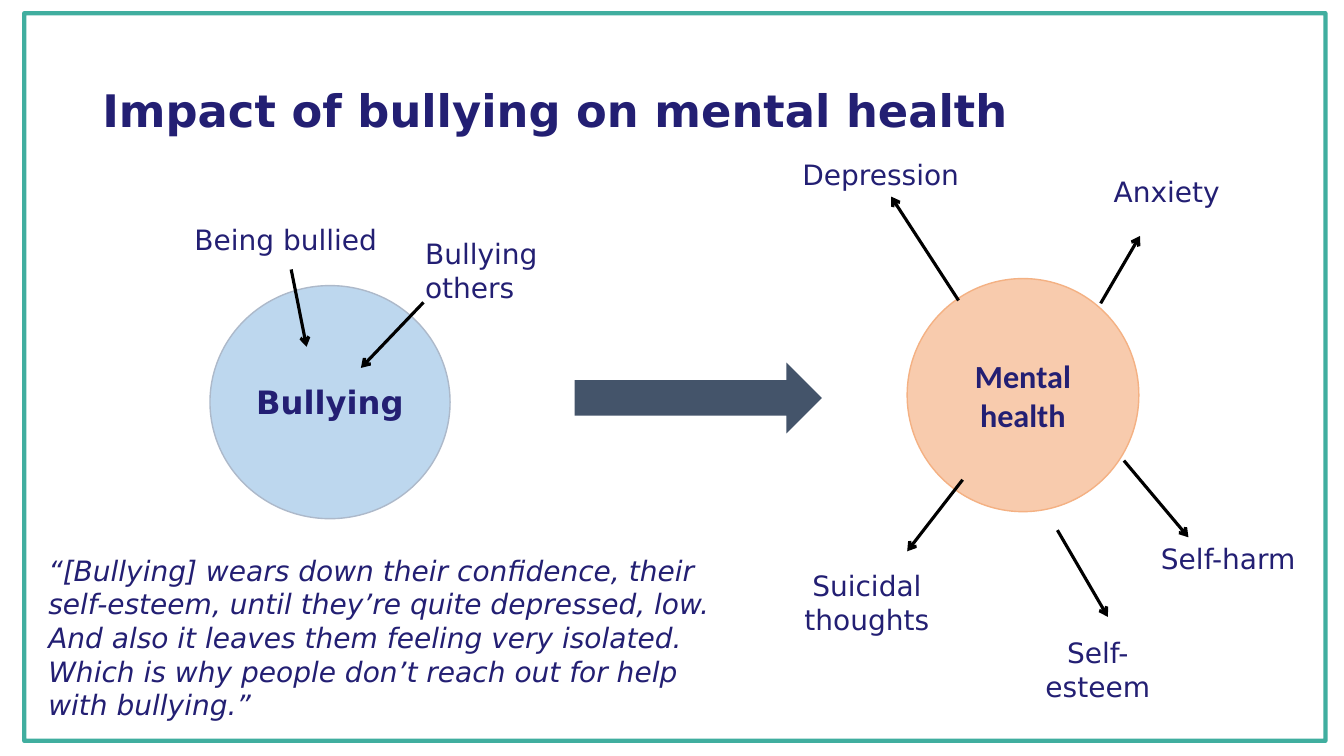
from dataclasses import dataclass
from lxml.etree import SubElement
from pptx import Presentation
from pptx.dml.color import RGBColor
from pptx.enum.shapes import MSO_CONNECTOR, MSO_SHAPE
from pptx.enum.text import MSO_ANCHOR, MSO_AUTO_SIZE, PP_ALIGN
from pptx.oxml.ns import qn
from pptx.util import Pt


@dataclass(frozen=True)
class Theme:
    font: str = "DejaVu Sans"
    alt: str = "Calibri"
    ink: str = "231F73"
    black: str = "000000"
    slate: str = "44546A"
    blue: str = "BDD7EE"
    steel: str = "ADB9CA"
    peach: str = "F8CBAD"
    orange: str = "F4B183"
    green: str = "009380"
    title: int = 32
    hub: int = 23
    body: int = 20


class Deck:
    def __init__(self, theme):
        self.theme = theme
        self.file = Presentation()
        self.file.slide_width, self.file.slide_height = Pt(960), Pt(540)
        self.slide = self.file.slides.add_slide(self.file.slide_layouts[6])

    def put(self, frame, words, size, font=None, align=PP_ALIGN.LEFT,
            bold=False, slant=False):
        frame.word_wrap = True
        para = frame.paragraphs[0]
        para.alignment = align
        run = para.add_run()
        run.text = words
        face = run.font
        face.name = font or self.theme.font
        face.size = Pt(size)
        face.bold, face.italic = bold, slant
        face.color.rgb = RGBColor.from_string(self.theme.ink)
        return para

    def title(self, words, box):
        frame = self.slide.shapes.add_textbox(*map(Pt, box)).text_frame
        frame.vertical_anchor = MSO_ANCHOR.MIDDLE
        para = self.put(frame, words, self.theme.title, bold=True)
        para.line_spacing = 0.9

    def label(self, words, box, align=PP_ALIGN.LEFT, slant=False):
        frame = self.slide.shapes.add_textbox(*map(Pt, box)).text_frame
        self.put(frame, words, self.theme.body, align=align, slant=slant)
        frame.auto_size = MSO_AUTO_SIZE.SHAPE_TO_FIT_TEXT

    def shape(self, kind, box, fill=None, line=None, width=1):
        item = self.slide.shapes.add_shape(kind, *map(Pt, box))
        item.shadow.inherit = False
        if fill:
            item.fill.solid()
            item.fill.fore_color.rgb = RGBColor.from_string(fill)
        else:
            item.fill.background()
        if line:
            item.line.color.rgb = RGBColor.from_string(line)
            item.line.width = Pt(width)
        else:
            item.line.fill.background()
        return item

    def hub(self, words, box, fill, line, font):
        frame = self.shape(MSO_SHAPE.OVAL, box, fill, line).text_frame
        frame.vertical_anchor = MSO_ANCHOR.MIDDLE
        self.put(frame, words, self.theme.hub, font, PP_ALIGN.CENTER, bold=True)

    def arrow(self, start, end):
        link = self.slide.shapes.add_connector(
            MSO_CONNECTOR.STRAIGHT, *map(Pt, start + end))
        link.line.color.rgb = RGBColor.from_string(self.theme.black)
        link.line.width = Pt(2.25)
        props = link._element.spPr
        SubElement(props.find(qn("a:ln")), qn("a:tailEnd"), type="arrow")
        SubElement(props, qn("a:effectLst"))

    def border(self, box):
        item = self.shape(MSO_SHAPE.RECTANGLE, box, line=self.theme.green, width=3)
        tint = item._element.spPr.find(qn("a:ln")).find(".//" + qn("a:srgbClr"))
        SubElement(tint, qn("a:alpha"), val="75000")


def main():
    theme = Theme()
    deck = Deck(theme)
    left, mid = PP_ALIGN.LEFT, PP_ALIGN.CENTER

    # Title
    deck.title("Impact of bullying on mental health", (66, 28.8, 828, 104.4))

    # Cause and effect
    deck.hub("Bullying", (150, 204, 171.5, 166.5), theme.blue, theme.steel, theme.font)
    deck.hub("Mental health", (648, 199, 165.5, 166.5), theme.peach, theme.orange,
             theme.alt)
    deck.shape(MSO_SHAPE.RIGHT_ARROW, (410.5, 259, 176.5, 50.5), theme.slate)

    # Labels around the two circles
    one, two = 31.5, 55.5
    for words, x, y, wide, high, align in (
        ("Being bullied", 131.8, 155.5, 162.7, one, left),
        ("Bullying others", 296.6, 165.4, 162.7, two, left),
        ("Depression", 566, 108.6, 140.4, one, left),
        ("Anxiety", 788.4, 121, 108.7, one, left),
        ("Self-harm", 819.4, 383, 116, one, mid),
        ("Suicidal thoughts", 548, 402.5, 142.5, two, mid),
        ("Self-esteem", 728, 450.7, 112.3, two, mid),
    ):
        deck.label(words, (x, y, wide, high), align)

    # Arrows into bullying, then out of mental health
    for start, end in (
        ((208, 192.5), (219, 247.7)),
        ((302.5, 216), (257.8, 262.8)),
        ((684.7, 214.6), (636.5, 140.4)),
        ((786.2, 216.7), (814.3, 168.5)),
        ((802.8, 329), (848.9, 383.8)),
        ((755.3, 378.7), (791.3, 440.6)),
        ((687.6, 342.7), (648, 393.8)),
    ):
        deck.arrow(start, end)

    # Quotation
    deck.label(
        "“[Bullying] wears down their confidence, their self-esteem, until "
        "they’re quite depressed, low. And also it leaves them feeling very "
        "isolated. Which is why people don’t reach out for help with bullying.”",
        (27.4, 391.7, 506.2, 128.2), slant=True)

    # Frame
    deck.border((17.3, 9.4, 929.5, 519.8))
    deck.file.save("out.pptx")


if __name__ == "__main__":
    main()
